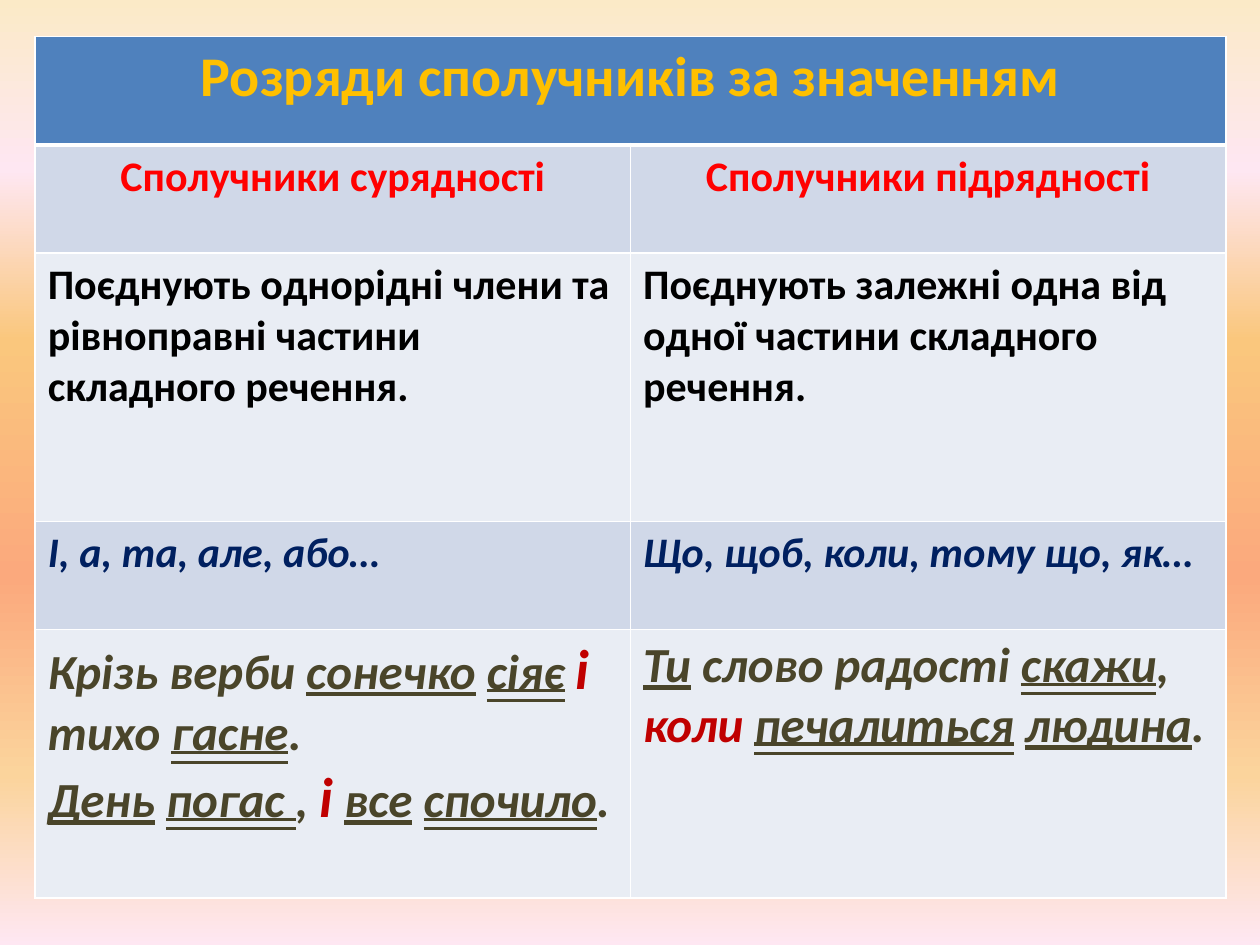
from copy import deepcopy
from dataclasses import dataclass

from lxml import etree
from pptx import Presentation
from pptx import util as u
from pptx.dml.color import RGBColor
from pptx.enum import text
from pptx.oxml import ns

HUES = {
    "head": "4F81BD", "band": "D0D8E8", "pale": "E9EDF4", "edge": "FFFFFF",
    "gold": "FFC000", "red": "FF0000", "black": "000000", "navy": "002060",
    "olive": "4A452A", "wine": "C00000",
}
STOPS = [(0, "FBEAC7"), (18, "FEE7F2"), (36, "FAC77D"),
         (61, "FBA97D"), (82, "FBD49C"), (100, "FEE7F2")]
ONE = text.MSO_UNDERLINE.SINGLE_LINE
TWO = text.MSO_UNDERLINE.DOUBLE_LINE
LINES = {"_": ONE, "=": TWO}


@dataclass
class Style:
    size: int
    hue: str
    slant: bool = False
    mid: bool = False


@dataclass
class Row:
    high: float
    fill: str
    style: Style
    cells: list


@dataclass
class Bit:
    words: str
    mark: str = ""
    size: int = 28


PROSE = Style(28, "olive", True)
LEFT = [
    [Bit("Крізь верби "), Bit("сонечко", "_"), Bit(" "), Bit("сіяє", "="), Bit(" "),
     Bit("і ", "!", 32), Bit("тихо "), Bit("гасне", "="), Bit(".")],
    [Bit("День", "_"), Bit(" "), Bit("погас ", "="), Bit(", "), Bit("і", "!", 32),
     Bit(" "), Bit("все", "_"), Bit(" "), Bit("спочило", "="), Bit(".")],
]
RIGHT = [
    [Bit("Ти", "_"), Bit(" слово радості "), Bit("скажи", "="), Bit(", "),
     Bit("коли ", "!"), Bit("печалиться", "="), Bit(" "), Bit("людина", "_"), Bit(".")],
]
ROWS = [
    Row(2.18, "head", Style(32, "gold", mid=True), ["Розряди сполучників за значенням"]),
    Row(2.18, "band", Style(24, "red", mid=True),
        ["Сполучники сурядності", "Сполучники підрядності"]),
    Row(5.41, "pale", Style(24, "black"),
        ["Поєднують однорідні члени та рівноправні частини складного речення.",
         "Поєднують залежні одна від одної частини складного речення."]),
    Row(2.18, "band", Style(24, "navy", True),
        ["І, а, та, але, або…", "Що, щоб, коли, тому що, як…"]),
    Row(5.41, "pale", PROSE, [LEFT, RIGHT]),
]


def paint(slide) -> None:
    fill = slide.background.fill
    fill.gradient()
    fill.gradient_angle = 270
    group = slide.element.find(".//" + ns.qn("a:gsLst"))
    for old in list(group):
        group.remove(old)
    for place, hue in STOPS:
        stop = etree.SubElement(group, ns.qn("a:gs"), pos=str(place * 1000))
        etree.SubElement(stop, ns.qn("a:srgbClr"), val=hue)


def edge(cell, top: float, base: float) -> None:
    props = cell._tc.get_or_add_tcPr()
    for side, wide in (("L", 1), ("R", 1), ("T", top), ("B", base)):
        line = etree.SubElement(props, ns.qn("a:ln" + side), w=str(u.Pt(wide)))
        fill = etree.SubElement(line, ns.qn("a:solidFill"))
        etree.SubElement(fill, ns.qn("a:srgbClr"), val=HUES["edge"])


def dress(run, style: Style, bit: Bit) -> None:
    font = run.font
    font.name = "Calibri"
    font.bold = True
    font.italic = style.slant
    font.size = u.Pt(bit.size)
    font.underline = LINES.get(bit.mark, False)
    hue = "wine" if bit.mark == "!" else style.hue
    font.color.rgb = RGBColor.from_string(HUES[hue])


def write(cell, style: Style, body) -> None:
    if isinstance(body, str):
        body = [[Bit(body, size=style.size)]]
    frame = cell.text_frame
    frame.text = "\n".join("" for _ in body)
    for para, bits in zip(frame.paragraphs, body):
        para.alignment = text.PP_ALIGN.CENTER if style.mid else text.PP_ALIGN.LEFT
        for bit in bits:
            run = para.add_run()
            run.text = bit.words
            dress(run, style, bit)


def build(slide) -> None:
    high = sum(row.high for row in ROWS)
    grid = slide.shapes.add_table(len(ROWS), 2, u.Cm(0.71), u.Cm(0.74),
                                  u.Cm(24), u.Cm(high)).table
    grid.cell(0, 0).merge(grid.cell(0, 1))
    for r, row in enumerate(ROWS):
        grid.rows[r].height = u.Cm(row.high)
        for c in range(2):
            cell = grid.cell(r, c)
            edge(cell, 3 if r == 1 else 1, 3 if r == 0 else 1)
            cell.fill.solid()
            cell.fill.fore_color.rgb = RGBColor.from_string(HUES[row.fill])
        for c, body in enumerate(row.cells):
            write(grid.cell(r, c), row.style, body)


def main() -> None:
    deck = Presentation()
    deck.slide_width, deck.slide_height = u.Cm(25.4), u.Cm(19.05)
    slide = deck.slides.add_slide(deck.slide_layouts[6])
    paint(slide)
    build(slide)
    deck.save("out.pptx")


if __name__ == "__main__":
    main()
